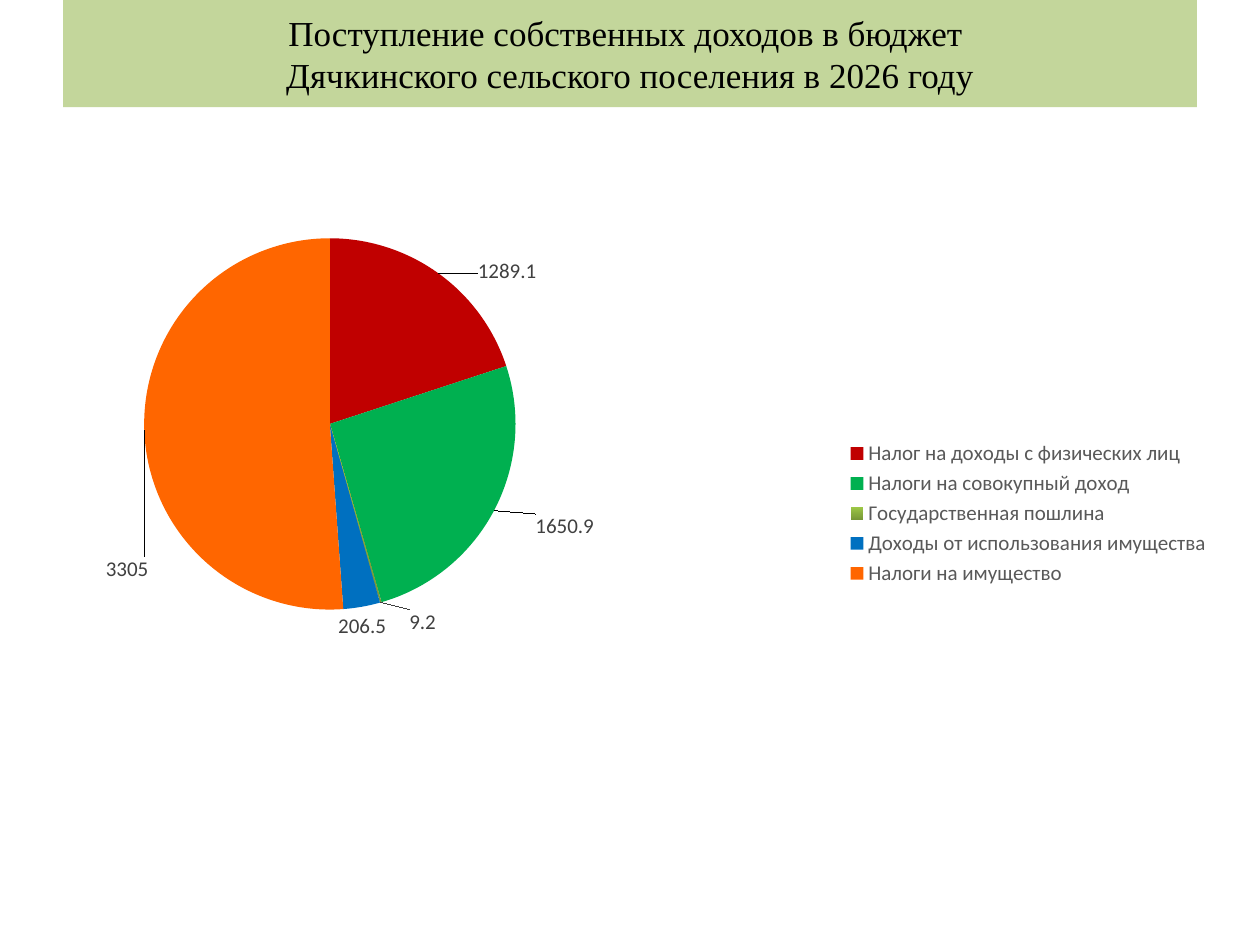
from lxml.etree import SubElement as Sub
from pptx import Presentation
from pptx.chart.data import CategoryChartData as Data
from pptx.dml.color import RGBColor as RGB
from pptx.enum.chart import XL_CHART_TYPE as Kind, XL_LABEL_POSITION as Pos, XL_LEGEND_POSITION as Side
from pptx.enum.text import MSO_ANCHOR as Anchor, PP_ALIGN as Align
from pptx.oxml.ns import qn
from pptx.util import Pt

# Content: category, value, slice colour, label shift as share of the chart
TITLE = "Поступление собственных доходов в бюджет \vДячкинского сельского поселения в 2026 году"
ROWS = [
    ("Налог на доходы с физических лиц", 1289.1, "red", (0.03, 0.02)),
    ("Налоги на совокупный доход", 1650.9, "green", (0.03, 0)),
    ("Государственная пошлина", 9.2, ("olive", "lime"), None),
    ("Доходы от использования имущества", 206.5, "blue", None),
    ("Налоги на имущество", 3305, "orange", (0.01, 0.17)),
]
COLORS = {
    "band": "C3D69B", "black": "000000", "label": "404040", "legend": "595959",
    "red": "C00000", "green": "00B050", "olive": "779737", "lime": "9DC746",
    "blue": "0070C0", "orange": "FF6600",
}
PLOT = {"x": 0.07, "y": 0.12, "w": 0.32, "h": 0.54}


def color(name):
    return RGB.from_string(COLORS[name])


def style(font, size, name, tint):
    font.size, font.name = Pt(size), name
    font.color.rgb = color(tint)


def write(shape, text, size=20, name="Times New Roman", tint="black"):
    frame = shape.text_frame
    frame.word_wrap = True
    frame.vertical_anchor = Anchor.MIDDLE
    frame.text = text
    par = frame.paragraphs[0]
    par.alignment = Align.CENTER
    for run in par.runs:
        style(run.font, size, name, tint)


def place(layout, **parts):
    """Fill a chart layout element with manual values."""
    box = Sub(layout, qn("c:manualLayout"))
    for tag, val in parts.items():
        Sub(box, qn("c:" + tag)).set("val", str(val))


deck = Presentation()
deck.slide_width, deck.slide_height = Pt(720), Pt(540)
slide = deck.slides.add_slide(deck.slide_layouts[5])

# Title band
title = slide.shapes.title
title.left, title.top, title.width, title.height = Pt(36), Pt(0), Pt(648), Pt(61.2)
title.fill.solid()
title.fill.fore_color.rgb = color("band")
write(title, TITLE)

# Pie chart
data = Data()
data.categories = [row[0] for row in ROWS]
data.add_series("Series 1", [row[1] for row in ROWS])
chart = slide.shapes.add_chart(
    Kind.PIE, Pt(36), Pt(61.2), Pt(663.12), Pt(464.4), data).chart
chart.has_title = False
style(chart.font, 10, "Calibri", "black")
chart.has_legend = True
chart.legend.position = Side.RIGHT
chart.legend.include_in_layout = False
style(chart.legend.font, 12, "Calibri", "legend")

# Plot area
area = chart._chartSpace.chart.plotArea
layout = area.find(qn("c:layout"))
if layout is None:
    layout = Sub(area, qn("c:layout"))
    area.insert(0, layout)
place(layout, layoutTarget="inner", xMode="edge", yMode="edge", **PLOT)

# Slices and labels
pie = chart.plots[0]
pie.vary_by_categories = True
series = pie.series[0]
labels = series.data_labels
labels.show_value = True
labels.position = Pos.BEST_FIT
style(labels.font, 12, "Calibri", "label")
lead = labels._element.find(qn("c:showLeaderLines"))
if lead is None:
    lead = Sub(labels._element, qn("c:showLeaderLines"))
lead.set("val", "1")

for num, (_, _, tint, shift) in enumerate(ROWS):
    point = series.points[num]
    fill = point.format.fill
    if isinstance(tint, tuple):
        fill.gradient()
        fill.gradient_angle = 90
        for stop, name in zip(fill.gradient_stops, tint):
            stop.color.rgb = color(name)
    else:
        fill.solid()
        fill.fore_color.rgb = color(tint)
    if shift:
        label = point.data_label
        style(label.font, 12, "Calibri", "label")
        label.position = Pos.OUTSIDE_END
        node = label._dLbl
        spot = Sub(node, qn("c:layout"))
        node.insert(1, spot)
        place(spot, x=shift[0], y=shift[1])

deck.save("out.pptx")
